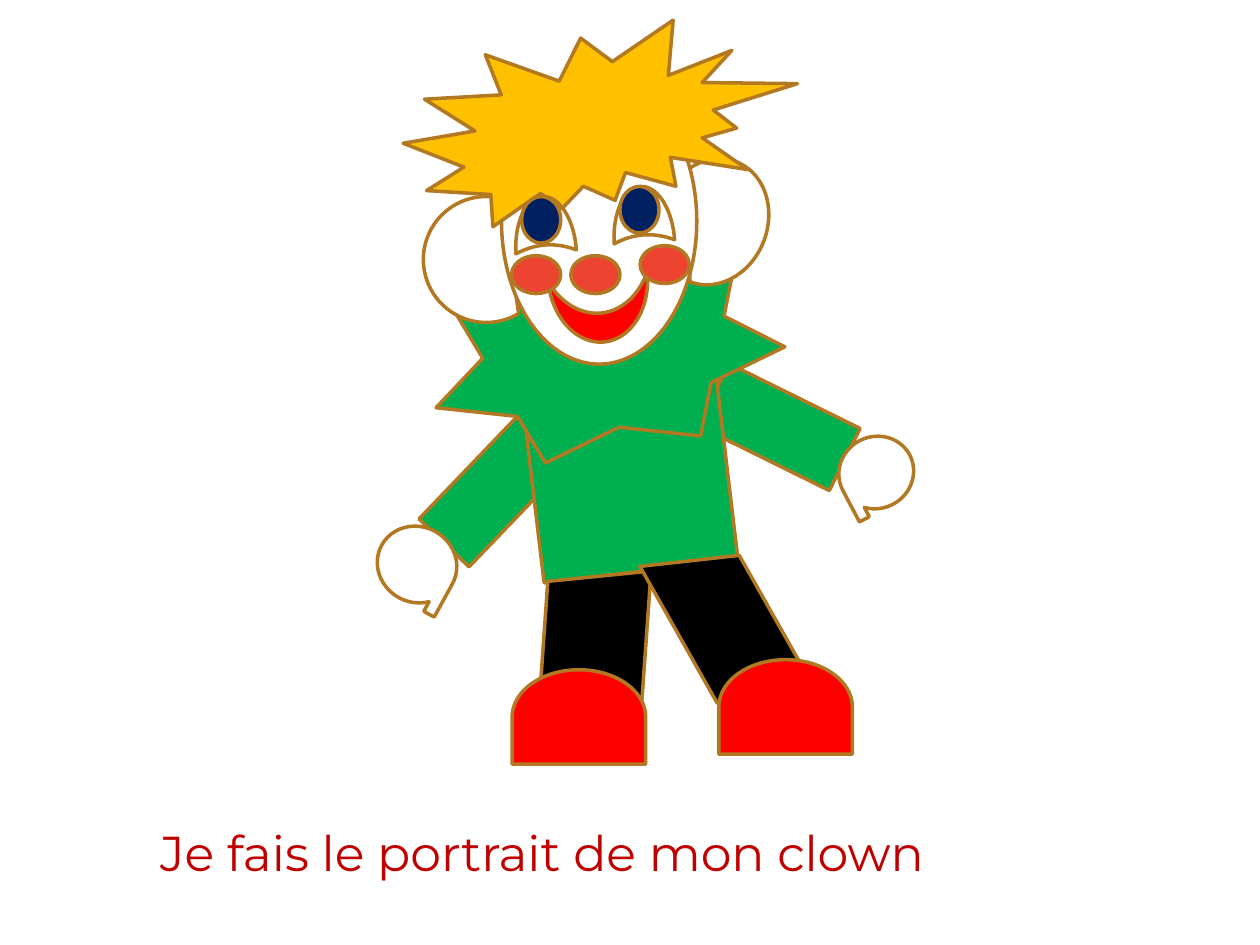
"""Build a slide with a clown made of preset shapes and a caption."""
from pptx import Presentation
from pptx.dml.color import RGBColor
from pptx.enum.shapes import MSO_SHAPE
from pptx.enum.text import MSO_ANCHOR, MSO_AUTO_SIZE, PP_ALIGN
from pptx.util import Inches, Pt

RECT, OVAL, CHORD = MSO_SHAPE.RECTANGLE, MSO_SHAPE.OVAL, MSO_SHAPE.CHORD
STAR, BURST, MOON = MSO_SHAPE.STAR_7_POINT, MSO_SHAPE.EXPLOSION2, MSO_SHAPE.MOON
LEG, SHOE = MSO_SHAPE.FLOWCHART_DATA, MSO_SHAPE.FLOWCHART_DELAY
HAND = MSO_SHAPE.FLOWCHART_SEQUENTIAL_ACCESS_STORAGE
LEFT, TOP, GROW = PP_ALIGN.LEFT, MSO_ANCHOR.TOP, MSO_AUTO_SIZE.SHAPE_TO_FIT_TEXT

GREEN = RGBColor(0x00, 0xB0, 0x50)
WHITE = RGBColor(0xFF, 0xFF, 0xFF)
YELLOW = RGBColor(0xFF, 0xC0, 0x00)
RED = RGBColor(0xFF, 0x00, 0x00)
NAVY = RGBColor(0x00, 0x20, 0x60)
CORAL = RGBColor(0xED, 0x43, 0x31)
BLACK = RGBColor(0x00, 0x00, 0x00)
BROWN = RGBColor(0xB2, 0x78, 0x22)
DARK_RED = RGBColor(0xC0, 0x00, 0x00)

prs = Presentation()
prs.slide_width, prs.slide_height = Inches(10), Inches(7.5)
COL, ROW = prs.slide_width / 10, prs.slide_height / 7.5
s = prs.slides.add_slide(prs.slide_layouts[5])


def box(x, y, w, h):
    return int(x * COL), int(y * ROW), int(w * COL), int(h * ROW)


def add_part(kind, at, fill=None, rot=0, adj=None, flips=()):
    sp = s.shapes.add_shape(kind, *box(*at))
    sp.shadow.inherit = False
    sp.rotation = rot
    if adj is not None:
        sp.adjustments[0] = adj
    if fill is None:
        sp.fill.background()
    else:
        sp.fill.solid()
        sp.fill.fore_color.rgb = fill
    sp.line.color.rgb = BROWN
    sp.line.width = Pt(2)
    for flip in flips:
        sp.element.spPr.get_or_add_xfrm().set(flip, "1")


for x, y, rot in ((5.91, 2.81, 296.3), (3.65, 3.31, 43.8)):
    add_part(RECT, (x, y, 0.55, 1.16), GREEN, rot)
add_part(RECT, (4.22, 2.97, 1.55, 1.57), GREEN, 353.2)
add_part(STAR, (3.4, 1.95, 2.81, 1.63), GREEN, 350.1)

add_part(CHORD, (5.23, 1.25, 0.86, 1.02), WHITE, 201.3)
add_part(CHORD, (3.36, 1.56, 1, 1), WHITE, 14.1)
add_part(OVAL, (3.98, 0.62, 1.55, 2.27), WHITE)
add_part(BURST, (3.2, 0.16, 3.13, 1.64), YELLOW)
add_part(MOON, (4.51, 2.06, 0.52, 0.79), RED, 264.2, adj=0.443)

EYES = ((4.1, 1.54), (4.88, 1.46))
for x, y in EYES:
    add_part(MOON, (x, y, 0.44, 0.48), rot=86.2, adj=0.875)
for x, y in EYES:
    add_part(OVAL, (x + 0.04, y + 0.02, 0.31, 0.37), NAVY)
for x, y in ((4.53, 2.03), (4.06, 2.03), (5.08, 1.95)):
    add_part(OVAL, (x, y, 0.39, 0.3), CORAL)

add_part(LEG, (4.2, 4.58, 1.03, 1.2), BLACK, 354.3)
add_part(LEG, (5, 4.63, 1.56, 0.73), BLACK, 60.5)
for x, y in ((4.22, 5.16), (5.86, 5.08)):
    add_part(SHOE, (x, y, 0.75, 1.06), RED, 270)
add_part(HAND, (3.01, 4.16, 0.6, 0.64), WHITE, 118.8, flips=("flipV",))
add_part(HAND, (6.67, 3.45, 0.57, 0.6), WHITE, 242.3, flips=("flipH", "flipV"))

title = s.shapes.title
title.left, title.top, title.width, title.height = box(1.17, 6.48, 7.02, 0.57)
tf = title.text_frame
tf.word_wrap, tf.auto_size, tf.vertical_anchor = False, GROW, TOP
p = tf.paragraphs[0]
p.alignment = LEFT
r = p.add_run()
r.text = "Je fais le portrait de mon clown"
r.font.name, r.font.size = "Montserrat", Pt(28)
r.font.color.rgb = DARK_RED

prs.save("out.pptx")
